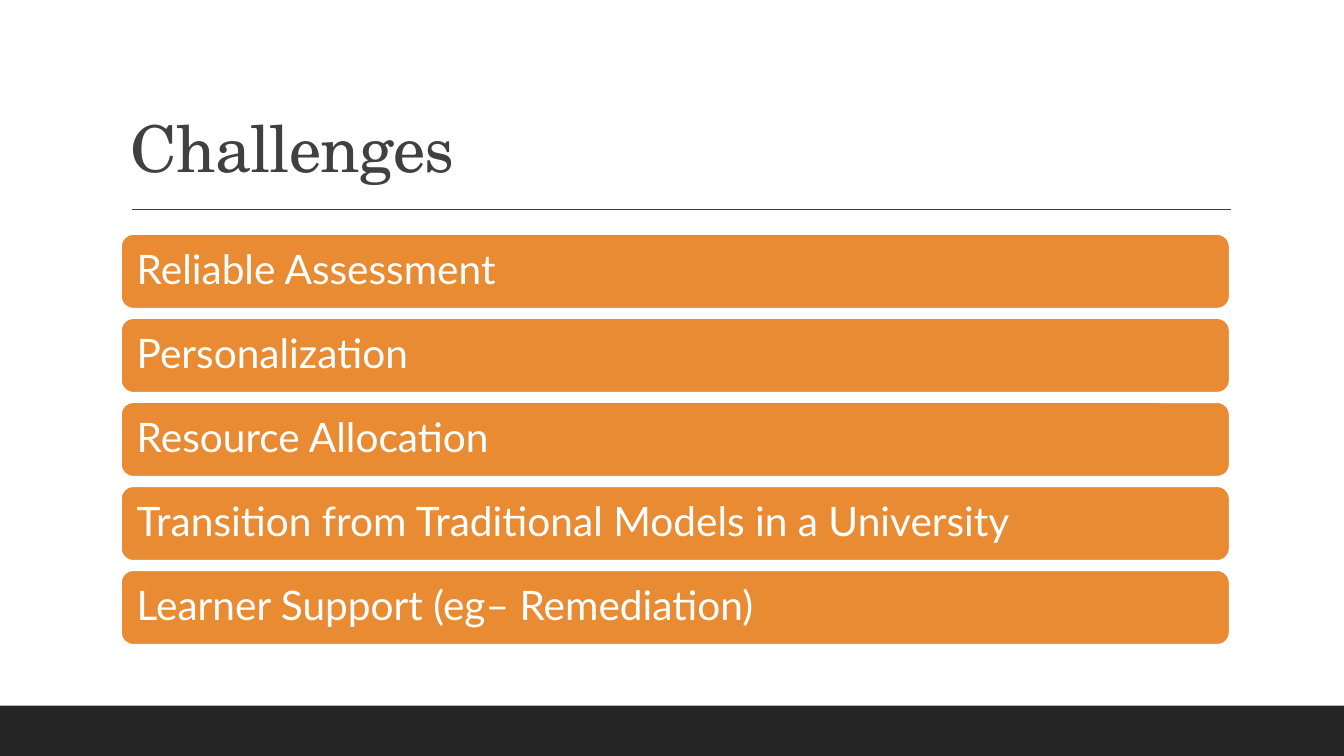
import pptx
import pptx.dml.color
import pptx.enum.shapes
import pptx.enum.text
import pptx.util
from lxml import etree
from pptx.oxml.ns import qn

Pt = pptx.util.Pt
COLOURS = {"footer": "262626", "heading": "404040", "bar": "E88B33", "white": "FFFFFF"}
CHALLENGES = [
    "Reliable Assessment",
    "Personalization",
    "Resource Allocation",
    "Transition from Traditional Models in a University",
    "Learner Support (eg– Remediation)",
]


def colour(name):
    return pptx.dml.color.RGBColor.from_string(COLOURS[name])


def write_line(text_frame, text, font_name, size, colour_name):
    text_frame.word_wrap = True
    text_frame.text = text
    paragraph = text_frame.paragraphs[0]
    paragraph.alignment = pptx.enum.text.PP_ALIGN.LEFT
    paragraph.line_spacing = 0.9
    font = paragraph.runs[0].font
    font.name = font_name
    font.size = Pt(size)
    font.color.rgb = colour(colour_name)
    return paragraph


def add_footer(slide, left, top, width, height):
    band = slide.shapes.add_shape(
        pptx.enum.shapes.MSO_SHAPE.RECTANGLE, Pt(left), Pt(top), Pt(width), Pt(height))
    band.shadow.inherit = False
    band.fill.solid()
    band.fill.fore_color.rgb = colour("footer")
    band.line.fill.background()


def add_heading(slide, left, top, width, height):
    rule_left, rule_top = left + 7.9, top + height + 12.8
    rule = slide.shapes.add_connector(
        pptx.enum.shapes.MSO_CONNECTOR.STRAIGHT,
        Pt(rule_left), Pt(rule_top), Pt(rule_left + 784.8), Pt(rule_top))
    rule.line.color.rgb = colour("heading")
    rule.line.width = Pt(1)
    etree.SubElement(rule._element.spPr, qn("a:effectLst"))

    title = slide.shapes.add_textbox(Pt(left), Pt(top), Pt(width), Pt(height))
    title.text_frame.vertical_anchor = pptx.enum.text.MSO_ANCHOR.BOTTOM
    paragraph = write_line(title.text_frame, "Challenges", "TeX Gyre Schola", 46, "heading")
    paragraph.runs[0]._r.get_or_add_rPr().set("spc", "-50")


def add_challenge_bars(slide, left, top, width, height, gap=6.7):
    count = len(CHALLENGES)
    bar_height = (height - gap * (count - 1)) / count
    for index, challenge in enumerate(CHALLENGES):
        bar_top = top + index * (bar_height + gap)
        bar = slide.shapes.add_shape(
            pptx.enum.shapes.MSO_SHAPE.ROUNDED_RECTANGLE,
            Pt(left), Pt(bar_top), Pt(width), Pt(bar_height))
        bar.shadow.inherit = False
        bar.fill.solid()
        bar.fill.fore_color.rgb = colour("bar")
        bar.line.color.rgb = colour("white")
        bar.line.width = Pt(1.25)
        text_frame = bar.text_frame
        text_frame.margin_left = text_frame.margin_right = Pt(8.7)
        text_frame.margin_top = text_frame.margin_bottom = 0
        text_frame.vertical_anchor = pptx.enum.text.MSO_ANCHOR.MIDDLE
        write_line(text_frame, challenge, "Lato", 29, "white")


def main():
    presentation = pptx.Presentation()
    presentation.slide_width = Pt(960)
    presentation.slide_height = Pt(540)
    slide = presentation.slides.add_slide(presentation.slide_layouts[6])
    add_footer(slide, 0, 504, 960, 36)
    add_heading(slide, 86.4, 22.5, 792, 114.2)
    add_challenge_bars(slide, 86.4, 167.2, 792, 293.4)
    presentation.save("out.pptx")


if __name__ == "__main__":
    main()
